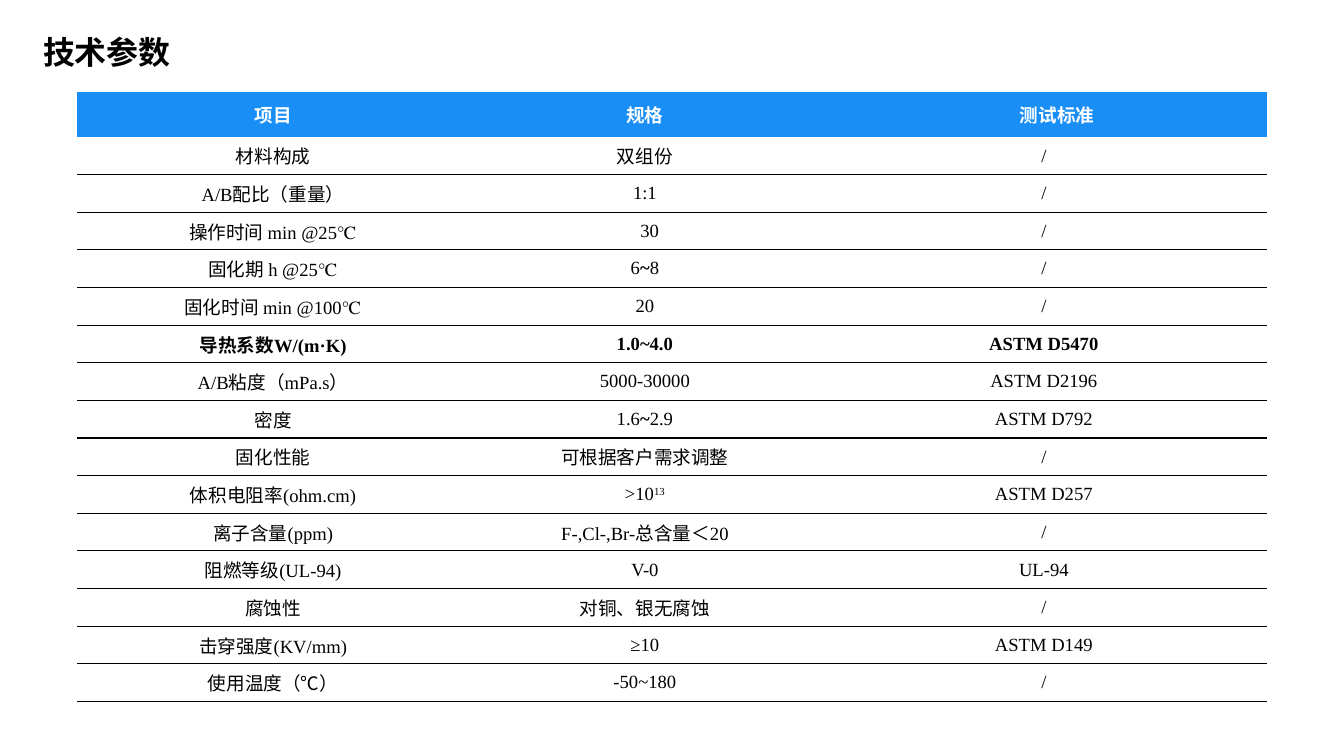
"""Build the slide with the table of technical parameters."""
from lxml import etree
from pptx import Presentation
from pptx.dml import color
from pptx.enum import text
from pptx.oxml import ns
from pptx.util import Cm, Pt

CJK = "Noto Sans CJK SC"
LATIN = "Times New Roman"
BLACK, WHITE, BLUE = "000000", "FFFFFF", "188EF6"


def rgb(value):
    return color.RGBColor.from_string(value)


def style_run(run, latin, size, ink, bold):
    for name, value in {"name": latin, "size": Pt(size), "bold": bold}.items():
        setattr(run.font, name, value)
    run.font.color.rgb = rgb(ink)
    properties = run._r.get_or_add_rPr()
    etree.SubElement(properties, ns.qn("a:ea"), typeface=CJK)
    return properties


parameters = [
    ("项目", "规格", "测试标准"),
    ("材料构成", "双组份", "/"),
    ("A/B配比（重量）", "1:1", "/"),
    ("操作时间 min @25℃", "30", "/"),
    ("固化期 h @25℃", "6|~|8", "/"),
    ("固化时间 min @100℃", "20", "/"),
    ("导热系数W/(m·K)", "1.0~4.0", "ASTM D5470"),
    ("A/B粘度（mPa.s）", "5000-30000", "ASTM D2196"),
    ("密度", "1.6|~|2.9", "ASTM D792"),
    ("固化性能", "可根据客户需求调整", "/"),
    ("体积电阻率(ohm.cm)", ">10|13", "ASTM D257"),
    ("离子含量(ppm)", "F-,Cl-,Br-总含量＜20", "/"),
    ("阻燃等级(UL-94)", "V-0", "UL-94"),
    ("腐蚀性", "对铜、银无腐蚀", "/"),
    ("击穿强度(KV/mm)", "≥10", "ASTM D149"),
    ("使用温度（℃）", "-50~180", "/"),
]
bold_items = ("项目", "导热系数W/(m·K)")
left_shifts = {"测试标准": 0.71, "30": 0.25}
column_widths = (10.41, 9.35, 11.85)
header_height, row_height = 1.2, 1

deck = Presentation()
deck.slide_width, deck.slide_height = Cm(35.71), Cm(20.09)
slide = deck.slides.add_slide(deck.slide_layouts[5])

heading = slide.shapes.title
for name, value in {"left": 0.89, "top": 0.74, "width": 3.96, "height": 1.27}.items():
    setattr(heading, name, Cm(value))
heading_frame = heading.text_frame
for name, value in {"word_wrap": False, "auto_size": text.MSO_AUTO_SIZE.NONE,
                    "vertical_anchor": text.MSO_ANCHOR.MIDDLE}.items():
    setattr(heading_frame, name, value)
heading_line = heading_frame.paragraphs[0]
heading_line.alignment = text.PP_ALIGN.LEFT
heading_run = heading_line.add_run()
heading_run.text = "技术参数"
style_run(heading_run, CJK, 24, BLACK, True)

table_height = header_height + row_height * (len(parameters) - 1)
grid = slide.shapes.add_table(
    len(parameters), len(column_widths), Cm(2.05), Cm(2.44),
    Cm(sum(column_widths)), Cm(table_height)).table
grid.horz_banding = False
for column, width in zip(grid.columns, column_widths):
    column.width = Cm(width)

for row, entries in enumerate(parameters):
    is_header = row == 0
    grid.rows[row].height = Cm(header_height if is_header else row_height)
    for col, entry in enumerate(entries):
        cell = grid.cell(row, col)
        for name, value in {"margin_left": Cm(left_shifts.get(entry, 0)),
                            "margin_right": 0, "margin_top": 0, "margin_bottom": 0,
                            "vertical_anchor": text.MSO_ANCHOR.MIDDLE}.items():
            setattr(cell, name, value)

        ruled = {"a:lnT": row > 1, "a:lnB": not is_header}
        for side in ("a:lnL", "a:lnR", "a:lnT", "a:lnB"):
            border = etree.SubElement(cell._tc.get_or_add_tcPr(), ns.qn(side), w=str(Pt(1)))
            if ruled.get(side):
                ink = etree.SubElement(border, ns.qn("a:solidFill"))
                etree.SubElement(ink, ns.qn("a:srgbClr"), val=BLACK)
            else:
                etree.SubElement(border, ns.qn("a:noFill"))
        if is_header:
            cell.fill.solid()
            cell.fill.fore_color.rgb = rgb(BLUE)
        else:
            cell.fill.background()

        line = cell.text_frame.paragraphs[0]
        line.alignment = text.PP_ALIGN.CENTER
        for part in entry.split("|"):
            run = line.add_run()
            run.text = part
            bold = entries[0] in bold_items or part == "~"
            properties = style_run(run, LATIN, 14, WHITE if is_header else BLACK, bold)
            if part == "13":
                properties.set("baseline", "30000")

deck.save("out.pptx")
